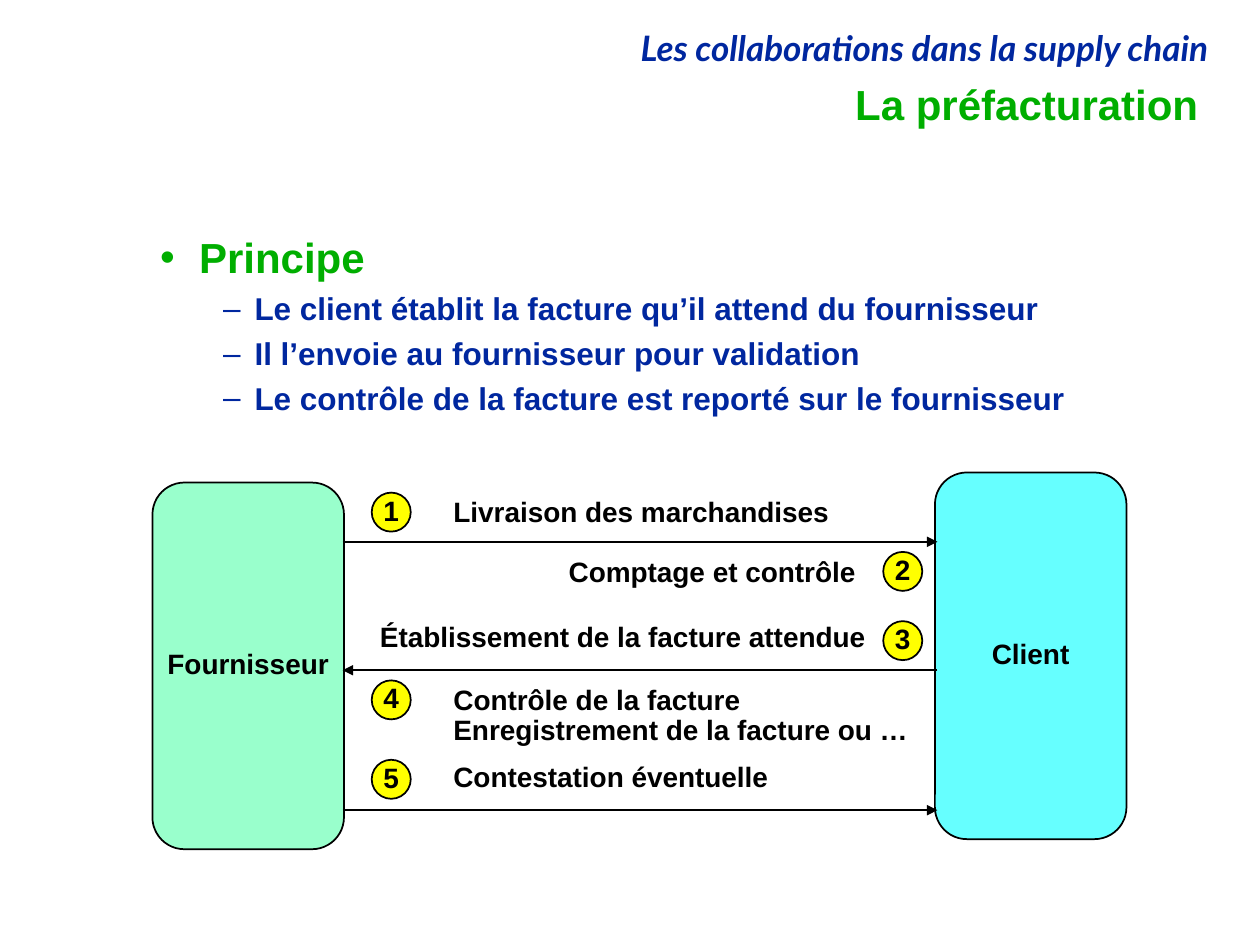
from lxml.etree import SubElement
from pptx import Presentation
from pptx.dml.color import RGBColor
from pptx.enum.shapes import MSO_CONNECTOR as Connector, MSO_SHAPE as Shape
from pptx.enum.text import MSO_ANCHOR as Anchor, MSO_AUTO_SIZE as AutoSize, PP_ALIGN as Align
from pptx.oxml.ns import qn
from pptx.util import Inches, Pt

BLUE = RGBColor(0x00, 0x27, 0x9F)
GREEN = RGBColor(0x00, 0xAE, 0x00)
MINT = RGBColor(0x99, 0xFF, 0xCC)
CYAN = RGBColor(0x66, 0xFF, 0xFF)
YELLOW = RGBColor(0xFF, 0xFF, 0x00)
BLACK = RGBColor(0x00, 0x00, 0x00)

POINTS = [
    "Le client établit la facture qu’il attend du fournisseur",
    "Il l’envoie au fournisseur pour validation",
    "Le contrôle de la facture est reporté sur le fournisseur",
]

# Number, left and top of its badge, lines of text, box of the label, alignment
STEPS = [
    ("1", 1.74, 0.16, ["Livraison des marchandises"], (2.29, 0.16, 3.19, 0.34), Align.LEFT),
    ("2", 5.8, 0.63, ["Comptage et contrôle"], (3.2, 0.63, 2.48, 0.34), Align.RIGHT),
    ("3", 5.8, 1.18, ["Établissement de la facture attendue"],
     (1.66, 1.15, 4.1, 0.35), Align.RIGHT),
    ("4", 1.74, 1.65, ["Contrôle de la facture", "Enregistrement de la facture ou …"],
     (2.29, 1.65, 3.82, 0.58), Align.LEFT),
    ("5", 1.74, 2.28, ["Contestation éventuelle"], (2.29, 2.26, 2.7, 0.34), Align.LEFT),
]


def place(shape, box):
    shape.left, shape.top, shape.width, shape.height = map(Inches, box)


def add_run(paragraph, text, size, color, font="Arial", italic=False):
    paragraph.line_spacing = 0.9
    run = paragraph.add_run()
    run.text = text
    run.font.name = font
    run.font.size = Pt(size)
    run.font.bold = True
    run.font.italic = italic
    run.font.color.rgb = color


def set_bullet(paragraph, character, margin, indent):
    properties = paragraph._p.get_or_add_pPr()
    properties.set("marL", str(Inches(margin)))
    properties.set("indent", str(Inches(indent)))
    SubElement(properties, qn("a:buFont"), typeface="Arial")
    SubElement(properties, qn("a:buChar"), char=character)


def add_heading(slide, box):
    heading = slide.shapes.add_textbox(*map(Inches, box))
    frame = heading.text_frame
    frame.word_wrap = True
    frame.paragraphs[0].alignment = Align.RIGHT
    add_run(frame.paragraphs[0], "Les collaborations dans la supply chain",
            20, BLUE, "Lato", italic=True)


def fill_title(slide, box):
    title = slide.shapes.title
    place(title, box)
    frame = title.text_frame
    frame.auto_size = AutoSize.NONE
    frame.vertical_anchor = Anchor.MIDDLE
    frame.paragraphs[0].alignment = Align.RIGHT
    add_run(frame.paragraphs[0], "La préfacturation", 24, GREEN)


def fill_body(slide, box):
    body = slide.placeholders[1]
    place(body, box)
    frame = body.text_frame
    frame.auto_size = AutoSize.NONE
    principle = frame.paragraphs[0]
    principle.space_before = Pt(0)
    add_run(principle, "Principe", 24, GREEN)
    set_bullet(principle, "•", 0.31, -0.31)
    for point in POINTS:
        paragraph = frame.add_paragraph()
        paragraph.level = 1
        paragraph.space_before = Pt(6.2)
        add_run(paragraph, point, 18, BLUE)
        set_bullet(paragraph, "–", 0.75, -0.25)


def add_node(slide, kind, box, text, color):
    node = slide.shapes.add_shape(kind, *map(Inches, box))
    node.shadow.inherit = False
    node.fill.solid()
    node.fill.fore_color.rgb = color
    node.line.color.rgb = BLACK
    node.line.width = Pt(1)
    frame = node.text_frame
    frame.word_wrap = False
    frame.vertical_anchor = Anchor.MIDDLE
    frame.paragraphs[0].alignment = Align.CENTER
    add_run(frame.paragraphs[0], text, 16, BLACK)


def add_label(slide, box, lines, alignment):
    label = slide.shapes.add_textbox(*map(Inches, box))
    frame = label.text_frame
    frame.word_wrap = False
    frame.auto_size = AutoSize.SHAPE_TO_FIT_TEXT
    paragraph = frame.paragraphs[0]
    paragraph.alignment = alignment
    for index, line in enumerate(lines):
        if index:
            paragraph.add_line_break()
        add_run(paragraph, line, 16, BLACK)


def add_arrow(slide, start, end, y):
    arrow = slide.shapes.add_connector(
        Connector.STRAIGHT, Inches(start), Inches(y), Inches(end), Inches(y))
    arrow.line.color.rgb = BLACK
    arrow.line.width = Pt(1)
    SubElement(arrow.line._get_or_add_ln(), qn("a:tailEnd"), type="triangle")
    SubElement(arrow._element.spPr, qn("a:effectLst"))


def add_exchange_diagram(slide, left, top):
    """Draw supplier and customer with the numbered exchanges between them."""
    add_node(slide, Shape.ROUNDED_RECTANGLE, (left, top + 0.08, 1.52, 2.91), "Fournisseur", MINT)
    add_node(slide, Shape.ROUNDED_RECTANGLE, (left + 6.21, top, 1.52, 2.91), "Client", CYAN)
    supplier, customer = left + 1.51, left + 6.23
    for start, end, y in [(supplier, customer, 0.55),
                          (customer, supplier, 1.57),
                          (supplier, customer, 2.68)]:
        add_arrow(slide, start, end, top + y)
    for number, badge_x, badge_y, lines, (x, y, width, height), alignment in STEPS:
        add_node(slide, Shape.OVAL, (left + badge_x, top + badge_y, 0.31, 0.31), number, YELLOW)
        add_label(slide, (left + x, top + y, width, height), lines, alignment)


def main():
    presentation = Presentation()
    presentation.slide_width = Inches(10)
    presentation.slide_height = Inches(7.5)
    slide = presentation.slides.add_slide(presentation.slide_layouts[1])
    add_heading(slide, (1.61, 0.2, 8.08, 0.4))
    fill_title(slide, (1.69, 0.6, 7.92, 0.5))
    fill_body(slide, (1.17, 1.83, 7.83, 1.6))
    add_exchange_diagram(slide, 1.21, 3.75)
    presentation.save("out.pptx")


if __name__ == "__main__":
    main()
